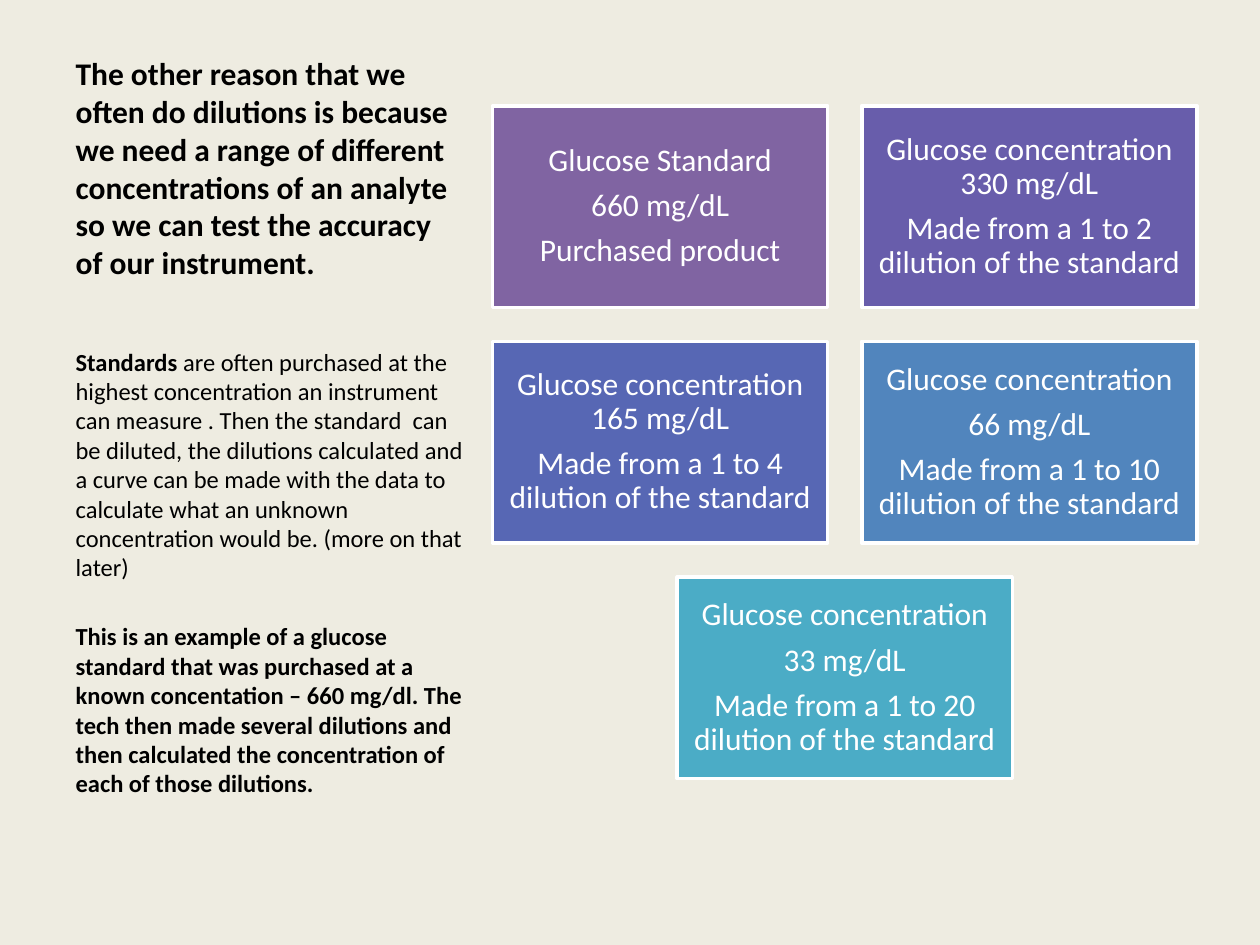
from pptx import Presentation
from pptx.dml.color import RGBColor
from pptx.enum.shapes import MSO_SHAPE
from pptx.enum.text import MSO_ANCHOR, PP_ALIGN
from pptx.util import Inches, Pt

RECTANGLE = MSO_SHAPE.RECTANGLE
MIDDLE, BOTTOM, TOP = MSO_ANCHOR.MIDDLE, MSO_ANCHOR.BOTTOM, MSO_ANCHOR.TOP
CENTER, LEFT = PP_ALIGN.CENTER, PP_ALIGN.LEFT

# Content
HEADLINE = ("The other reason that we often do dilutions is because we need a range of "
            "different concentrations of an analyte so we can test the accuracy of our instrument.")
# Each paragraph is a list of (text, bold)
EXPLANATION = [
    [("Standards ", True),
     ("are often purchased at the highest concentration an instrument can measure . "
      "Then the standard  can be diluted, the dilutions calculated and a curve can be made "
      "with the data to calculate what an unknown concentration would be. "
      "(more on that later)", False)],
    [("This is an example of a glucose standard that was purchased at a known concentation "
      "– 660 mg/dl. The tech then made several dilutions and then calculated the "
      "concentration of each of those dilutions.", True)],
]
DILUTIONS = [
    ("8064A2", ["Glucose Standard", "660 mg/dL", "Purchased product"]),
    ("685DAB", ["Glucose concentration 330 mg/dL", "Made from a 1 to 2 dilution of the standard"]),
    ("5767B4", ["Glucose concentration 165 mg/dL", "Made from a 1 to 4 dilution of the standard"]),
    ("5185BD", ["Glucose concentration", "66 mg/dL", "Made from a 1 to 10 dilution of the standard"]),
    ("4BACC6", ["Glucose concentration", "33 mg/dL", "Made from a 1 to 20 dilution of the standard"]),
]

THEME = {"font": "Calibri", "background": "EEECE1", "ink": "000000", "light": "FFFFFF",
         "large": 18, "small": 14}

# Layout, in inches
SLIDE_W, SLIDE_H = 10, 7.5
TEXT_LEFT, TEXT_W = 0.5, 3.29
GRID_LEFT, GRID_TOP, COLUMNS = 3.91, 0.84, 2
CARD_W, CARD_H, GAP = 2.66, 1.6, 0.27
CARD_INSET = 0.07


def rgb(key):
    return RGBColor.from_string(THEME.get(key, key))


def style(run, size, color, bold=False):
    run.font.name = THEME["font"]
    run.font.size = Pt(THEME[size])
    run.font.color.rgb = rgb(color)
    run.font.bold = bold


def place(shape, left, top, width, height):
    shape.left, shape.top = Inches(left), Inches(top)
    shape.width, shape.height = Inches(width), Inches(height)


def add_headline(title):
    place(title, TEXT_LEFT, 0.3, TEXT_W, 2.28)
    frame = title.text_frame
    frame.text = HEADLINE
    frame.vertical_anchor = BOTTOM
    frame.margin_bottom = Inches(0.35)
    frame.paragraphs[0].alignment = LEFT
    style(frame.paragraphs[0].runs[0], "large", "ink", True)


def add_explanation(body):
    place(body, TEXT_LEFT, 2.42, TEXT_W, 4.28)
    frame = body.text_frame
    frame.vertical_anchor = TOP
    frame.margin_top = Inches(0.33)
    for i, parts in enumerate(EXPLANATION):
        paragraph = frame.add_paragraph() if i else frame.paragraphs[0]
        paragraph.space_before = Pt(22.6 if i else 0)
        for text, bold in parts:
            run = paragraph.add_run()
            run.text = text
            style(run, "small", "ink", bold)


def add_card(slide, left, top, fill, lines):
    card = slide.shapes.add_shape(
        RECTANGLE, Inches(left), Inches(top), Inches(CARD_W), Inches(CARD_H))
    card.shadow.inherit = False
    card.fill.solid()
    card.fill.fore_color.rgb = rgb(fill)
    card.line.color.rgb = rgb("light")
    card.line.width = Pt(2)
    frame = card.text_frame
    frame.word_wrap = True
    frame.vertical_anchor = MIDDLE
    frame.margin_left = frame.margin_right = Inches(CARD_INSET)
    frame.margin_top = frame.margin_bottom = Inches(CARD_INSET)
    frame.text = "\n".join(lines)
    for paragraph in frame.paragraphs:
        paragraph.alignment = CENTER
        paragraph.line_spacing = 0.9
        paragraph.space_after = Pt(0.35 * THEME["large"])
        style(paragraph.runs[0], "large", "light")


def add_dilutions(slide):
    for start in range(0, len(DILUTIONS), COLUMNS):
        row = DILUTIONS[start:start + COLUMNS]
        # A short row is centred under the full ones
        indent = (COLUMNS - len(row)) * (CARD_W + GAP) / 2
        top = GRID_TOP + start // COLUMNS * (CARD_H + GAP)
        for column, (fill, lines) in enumerate(row):
            left = GRID_LEFT + indent + column * (CARD_W + GAP)
            add_card(slide, left, top, fill, lines)


def main():
    deck = Presentation()
    deck.slide_width, deck.slide_height = Inches(SLIDE_W), Inches(SLIDE_H)
    slide = deck.slides.add_slide(deck.slide_layouts.get_by_name("Content with Caption"))
    slide.background.fill.solid()
    slide.background.fill.fore_color.rgb = rgb("background")

    # The cards take the place of the content placeholder
    content, caption = slide.placeholders[1], slide.placeholders[2]
    content.element.getparent().remove(content.element)

    add_headline(slide.shapes.title)
    add_dilutions(slide)
    add_explanation(caption)
    deck.save("out.pptx")


if __name__ == "__main__":
    main()
